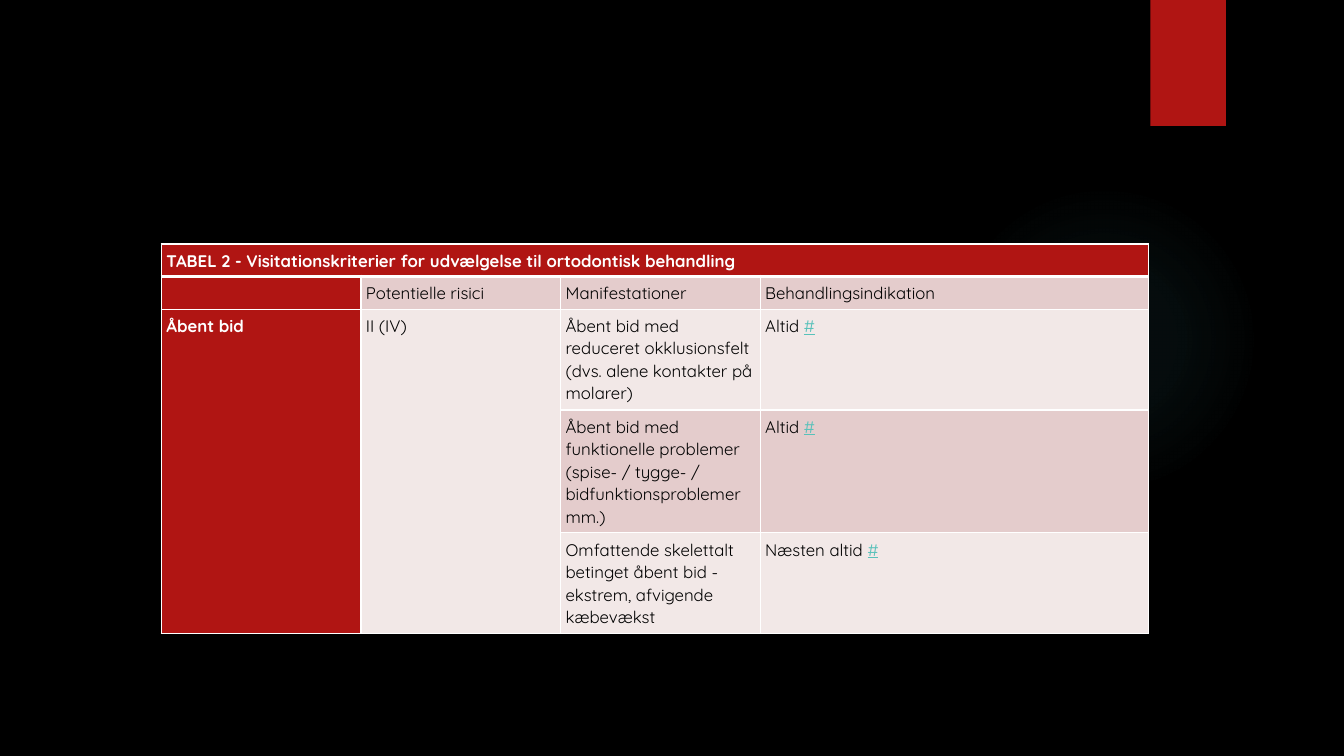
from dataclasses import dataclass

from lxml.etree import SubElement
from pptx import Presentation
from pptx.dml.color import RGBColor
from pptx.enum.shapes import MSO_SHAPE
from pptx.enum.text import MSO_ANCHOR
from pptx.oxml.ns import qn
from pptx.util import Inches, Pt

HEADING = "TABEL 2 - Visitationskriterier for udvælgelse til ortodontisk behandling"
ROWS = [
    [HEADING, "", "", ""],
    ["", "Potentielle risici", "Manifestationer", "Behandlingsindikation"],
    ["Åbent bid", "II (IV)",
     "Åbent bid med reduceret okklusionsfelt (dvs. alene kontakter på molarer)",
     "Altid #"],
    ["", "",
     "Åbent bid med funktionelle problemer (spise- / tygge- / bidfunktionsproblemer mm.)",
     "Altid #"],
    ["", "",
     "Omfattende skelettalt betinget åbent bid - ekstrem, afvigende kæbevækst",
     "Næsten altid #"],
]
MERGES = [((0, 0), (0, 3)), ((2, 0), (4, 0)), ((2, 1), (4, 1))]
COLUMN_WIDTHS = [1.98, 1.98, 1.98, 3.85]
ROW_HEIGHTS = [0.32, 0.32, 1, 1.22, 1]
TABLE_LEFT, TABLE_TOP = 1.6, 2.42
GLOW_STOPS = [(0, 7), (36, 6), (69, 0)]


@dataclass(frozen=True)
class Theme:
    background: str = "000000"
    accent: str = "B01513"
    glow: str = "50B9C1"
    dark_band: str = "E4CCCC"
    light_band: str = "F2E8E7"
    ink: str = "000000"
    light: str = "FFFFFF"
    reference: str = "58C1BA"
    font: str = "Quicksand"
    size: int = 12
    line_spacing: float = 1.07
    border: int = 1
    heavy_border: int = 3


THEME = Theme()


def color(value):
    return RGBColor.from_string(value)


def apply(target, values):
    for name, value in values.items():
        setattr(target, name, value)


def add_element(parent, tag, **attributes):
    return SubElement(parent, qn(tag), {key: str(value) for key, value in attributes.items()})


def add_plain_shape(page, kind, left, top, width, height):
    shape = page.shapes.add_shape(
        kind, Inches(left), Inches(top), Inches(width), Inches(height))
    shape.shadow.inherit = False
    shape.line.fill.background()
    shape.fill.solid()
    return shape


def add_glow(page):
    glow = add_plain_shape(page, MSO_SHAPE.OVAL, 9.41, 1.83, 3.08, 3.08)
    properties = glow.element.spPr
    solid = properties.find(qn("a:solidFill"))
    gradient = add_element(properties, "a:gradFill", rotWithShape=1)
    stops = add_element(gradient, "a:gsLst")
    for position, opacity in GLOW_STOPS:
        stop = add_element(stops, "a:gs", pos=position * 1000)
        tint = add_element(stop, "a:srgbClr", val=THEME.glow)
        add_element(tint, "a:alpha", val=opacity * 1000)
    circle = add_element(gradient, "a:path", path="circle")
    add_element(circle, "a:fillToRect", l=50000, t=50000, r=50000, b=50000)
    properties.replace(solid, gradient)


def add_borders(cell, row):
    properties = cell._tc.get_or_add_tcPr()
    heavy_sides = {0: "B", 1: "T"}
    for side in "LRTB":
        weight = THEME.heavy_border if heavy_sides.get(row) == side else THEME.border
        line = add_element(properties, f"a:ln{side}", w=Pt(weight))
        add_element(add_element(line, "a:solidFill"), "a:srgbClr", val=THEME.light)


def write_text(cell, text, emphasized):
    para = cell.text_frame.paragraphs[0]
    para.line_spacing = THEME.line_spacing
    if not text:
        add_element(para._p, "a:endParaRPr", sz=THEME.size * 100)
        return
    body, mark, _ = text.partition("#")
    for part in filter(None, (body, mark)):
        span = para.add_run()
        span.text = part
        is_mark = part == "#"
        apply(span.font, {
            "name": THEME.font, "size": Pt(THEME.size),
            "bold": emphasized, "underline": is_mark})
        plain = THEME.light if emphasized else THEME.ink
        span.font.color.rgb = color(THEME.reference if is_mark else plain)


def add_criteria_table(page):
    frame = page.shapes.add_table(
        len(ROWS), len(COLUMN_WIDTHS), Inches(TABLE_LEFT), Inches(TABLE_TOP),
        Inches(sum(COLUMN_WIDTHS)), Inches(sum(ROW_HEIGHTS)))
    table = frame.table
    for column, width in zip(table.columns, COLUMN_WIDTHS):
        column.width = Inches(width)
    for line, height in zip(table.rows, ROW_HEIGHTS):
        line.height = Inches(height)
    for start, end in MERGES:
        table.cell(*start).merge(table.cell(*end))
    inset = Inches(0.05)
    for row, texts in enumerate(ROWS):
        for column, text in enumerate(texts):
            cell = table.cell(row, column)
            emphasized = row == 0 or column == 0
            apply(cell, {
                "margin_left": inset, "margin_right": inset,
                "margin_top": inset, "margin_bottom": inset,
                "vertical_anchor": MSO_ANCHOR.MIDDLE if row == 0 else MSO_ANCHOR.TOP})
            add_borders(cell, row)
            band = THEME.dark_band if row % 2 else THEME.light_band
            cell.fill.solid()
            cell.fill.fore_color.rgb = color(THEME.accent if emphasized else band)
            write_text(cell, text, emphasized)


def main():
    deck = Presentation()
    apply(deck, {"slide_width": Inches(13.33), "slide_height": Inches(7.5)})
    page = deck.slides.add_slide(deck.slide_layouts[6])
    page.background.fill.solid()
    page.background.fill.fore_color.rgb = color(THEME.background)
    add_glow(page)
    ribbon = add_plain_shape(page, MSO_SHAPE.RECTANGLE, 11.41, 0, 0.75, 1.25)
    ribbon.fill.fore_color.rgb = color(THEME.accent)
    add_criteria_table(page)
    deck.save("out.pptx")


if __name__ == "__main__":
    main()
